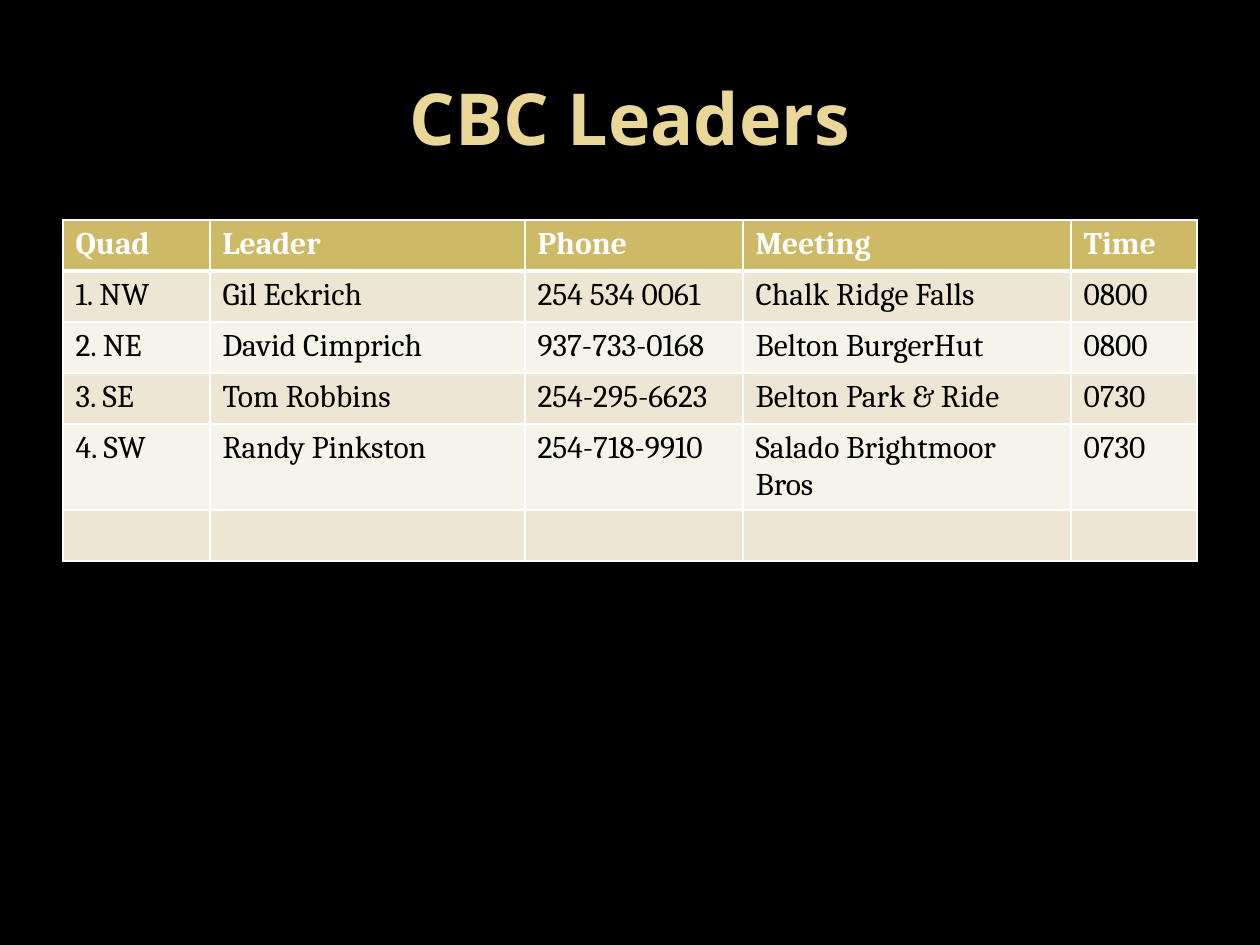
"""Build the CBC Leaders slide with its contact table."""
from lxml.etree import fromstring
from pptx import Presentation
from pptx.dml.color import RGBColor
from pptx.enum.text import MSO_ANCHOR, PP_ALIGN
from pptx.oxml.ns import nsdecls
from pptx.util import Emu, Pt

BLACK = RGBColor(0x00, 0x00, 0x00)
WHITE = RGBColor(0xFF, 0xFF, 0xFF)
PALE_GOLD = RGBColor(0xEA, 0xD6, 0x96)
GOLD = RGBColor(0xCE, 0xB9, 0x66)
SAND = RGBColor(0xED, 0xE6, 0xD3)
IVORY = RGBColor(0xF6, 0xF3, 0xEA)

LEADERS = [
    ("Quad", "Leader", "Phone", "Meeting", "Time"),
    ("1. NW", "Gil Eckrich", "254 534 0061", "Chalk Ridge Falls", "0800"),
    ("2. NE", "David Cimprich", "937-733-0168", "Belton BurgerHut", "0800"),
    ("3. SE", "Tom Robbins", "254-295-6623", "Belton Park & Ride", "0730"),
    ("4. SW", "Randy Pinkston", "254-718-9910", "Salado Brightmoor Bros", "0730"),
    ("", "", "", "", ""),
]
COLUMN_WIDTHS = (147, 315, 218, 328, 126)
ROW_HEIGHTS = (51, 51, 51, 51, 86, 51)


def px(length):
    return Emu(round(length * 914400 / 126))


def add_borders(cell, top, bottom):
    sides = (("lnL", 1), ("lnR", 1), ("lnT", top), ("lnB", bottom))
    for position, (side, width) in enumerate(sides):
        border = fromstring(
            f'<a:{side} {nsdecls("a")} w="{Pt(width)}"><a:solidFill>'
            f'<a:srgbClr val="{WHITE}"/></a:solidFill></a:{side}>')
        cell._tc.get_or_add_tcPr().insert(position, border)


prs = Presentation()
prs.slide_width, prs.slide_height = px(1260), px(945)
slide = prs.slides.add_slide(prs.slide_layouts[5])
slide.background.fill.solid()
slide.background.fill.fore_color.rgb = BLACK

title = slide.shapes.title
title.left, title.top, title.width, title.height = px(63), px(38), px(1134), px(158)
title.text_frame.text = "CBC Leaders"
title.text_frame.vertical_anchor = MSO_ANCHOR.MIDDLE
heading = title.text_frame.paragraphs[0]
heading.alignment = PP_ALIGN.CENTER
heading.font.name = "Open Sans"
heading.font.size = Pt(41)
heading.font.bold = True
heading.font.color.rgb = PALE_GOLD

roster = slide.shapes.add_table(
    len(LEADERS), len(COLUMN_WIDTHS), px(63), px(220),
    px(sum(COLUMN_WIDTHS)), px(sum(ROW_HEIGHTS))).table
for column, width in zip(roster.columns, COLUMN_WIDTHS):
    column.width = px(width)

for r, (entries, height) in enumerate(zip(LEADERS, ROW_HEIGHTS)):
    roster.rows[r].height = px(height)
    is_header = r == 0
    band = GOLD if is_header else SAND if r % 2 else IVORY
    for c, entry in enumerate(entries):
        cell = roster.cell(r, c)
        cell.text = entry
        cell.fill.solid()
        cell.fill.fore_color.rgb = band
        add_borders(cell, top=3 if r == 1 else 1, bottom=3 if is_header else 1)
        font = cell.text_frame.paragraphs[0].font
        font.name = "Cambria"
        font.size = Pt(18)
        font.bold = is_header
        font.color.rgb = WHITE if is_header else BLACK

prs.save("out.pptx")
